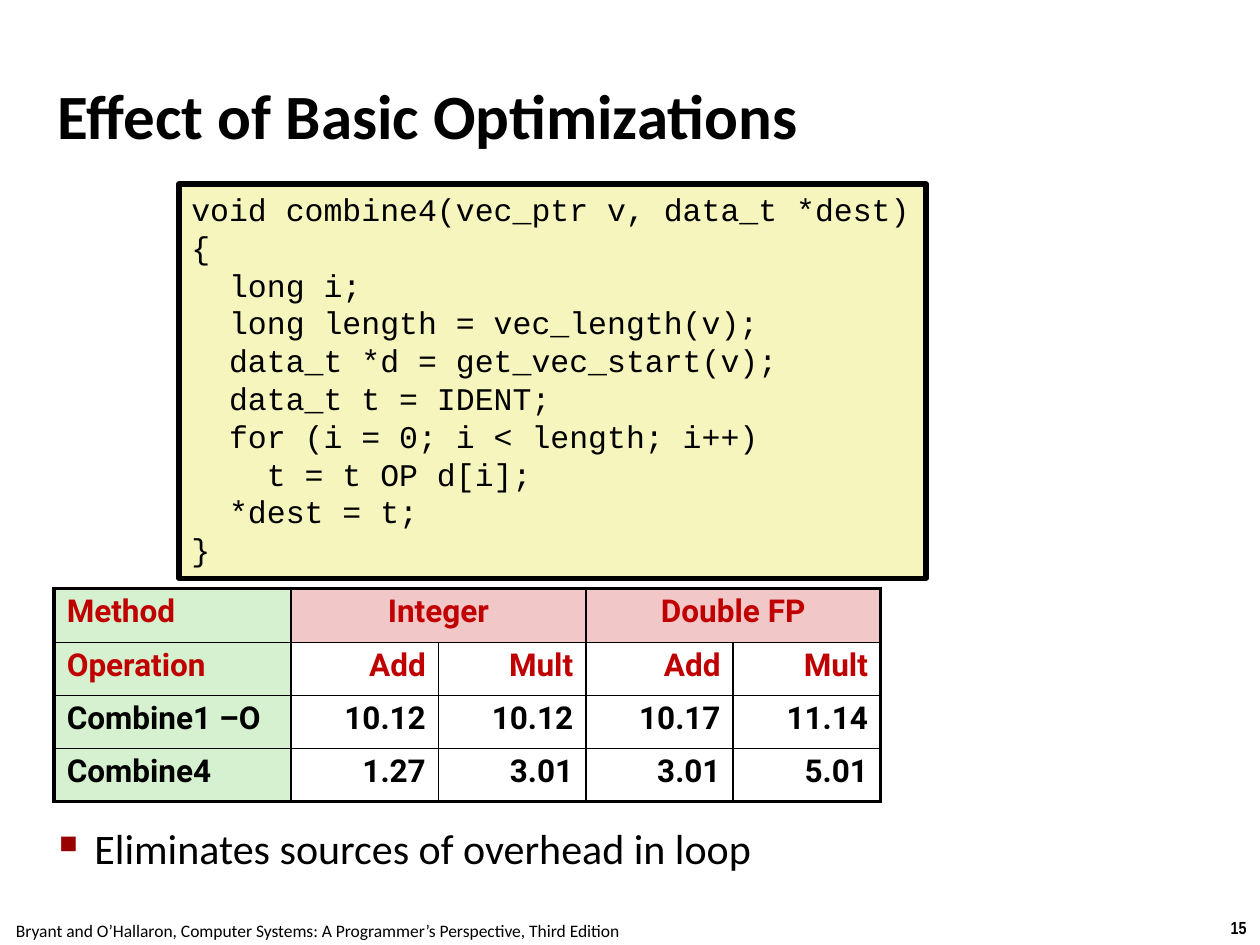
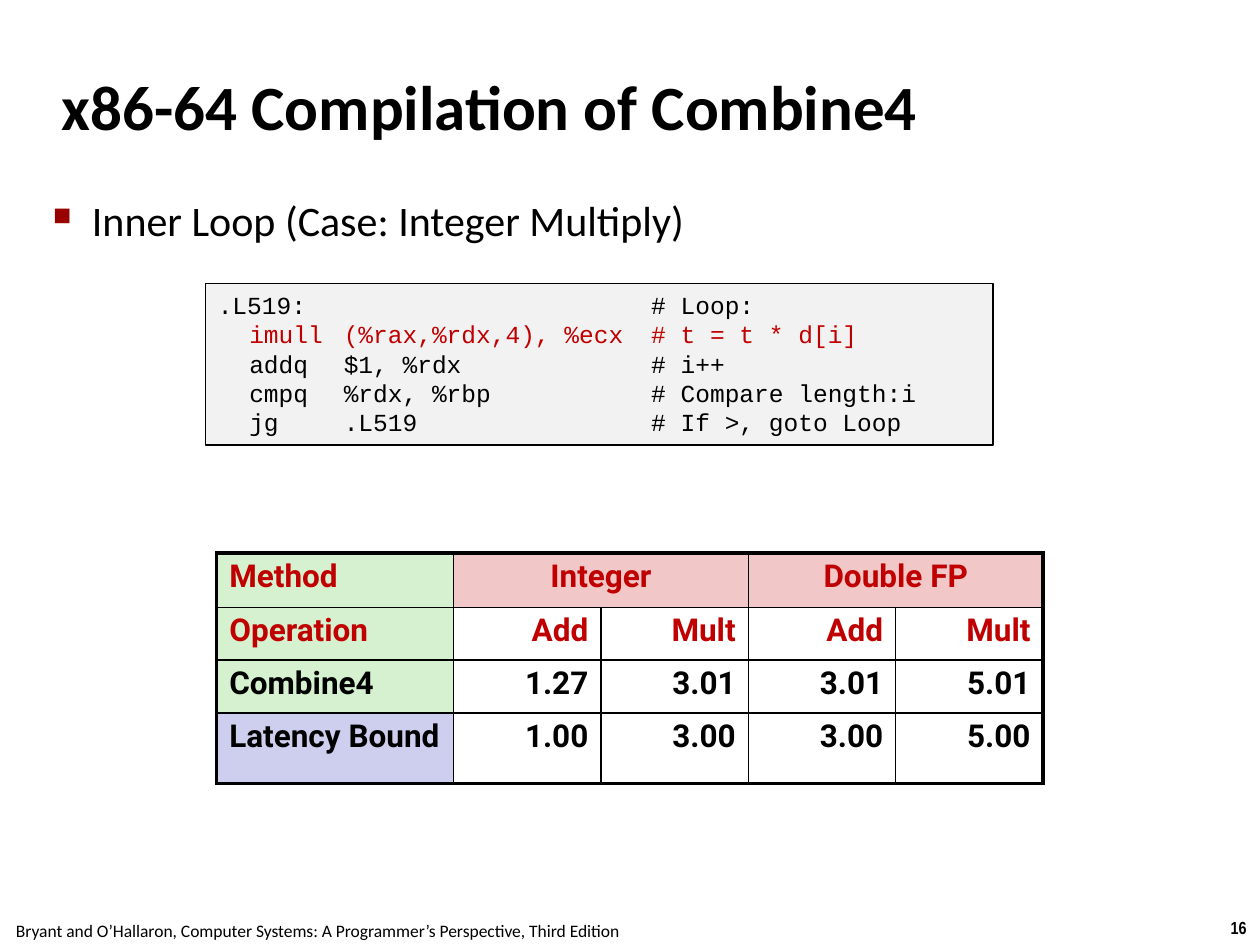
from pptx import Presentation
from pptx.util import Inches, Pt
from pptx.dml.color import RGBColor
from pptx.enum.shapes import MSO_SHAPE as Shape
from pptx.enum.text import PP_ALIGN as Align, MSO_ANCHOR as Anchor
from pptx.oxml.ns import qn
from lxml.etree import SubElement, Element

BLACK = RGBColor(0x00, 0x00, 0x00)
RED = RGBColor(0xC0, 0x00, 0x00)
GREEN = RGBColor(0xD5, 0xF1, 0xCF)
PINK = RGBColor(0xF1, 0xC7, 0xC7)
BLUE = RGBColor(0xCE, 0xCE, 0xEF)
CREAM = RGBColor(0xF6, 0xF5, 0xBD)
GREY = RGBColor(0xF2, 0xF2, 0xF2)
MAROON = RGBColor(0x99, 0x00, 0x00)

FOOTER = "Bryant and O’Hallaron, Computer Systems: A Programmer’s Perspective, Third Edition"
HEADS = ["Method", "Integer", "", "Double FP", ""]
OPS = ["Operation", "Add", "Mult", "Add", "Mult"]
COMBINE4 = ["Combine4", "1.27", "3.01", "3.01", "5.01"]

SOURCE = """void combine4(vec_ptr v, data_t *dest)
{
  long i;
  long length = vec_length(v);
  data_t *d = get_vec_start(v);
  data_t t = IDENT;
  for (i = 0; i < length; i++)
    t = t OP d[i];
  *dest = t;
}"""

LOOP = """.L519:\t\t# Loop:
\timull\t(%rax,%rdx,4), %ecx\t# t = t * d[i]
\taddq\t$1, %rdx\t# i++
\tcmpq\t%rdx, %rbp\t# Compare length:i
\tjg\t.L519\t# If >, goto Loop"""


def write(frame, text, font="Calibri", size=18, color=BLACK, bold=False,
          align=Align.LEFT, anchor=Anchor.TOP, inset=(0.1, 0.05), wrap=True,
          space=None, before=None, tabs=(), marked=None):
    frame.word_wrap = wrap
    frame.vertical_anchor = anchor
    frame.margin_left = frame.margin_right = Inches(inset[0])
    frame.margin_top = frame.margin_bottom = Inches(inset[1])
    for num, line in enumerate(text.split("\n")):
        para = frame.add_paragraph() if num else frame.paragraphs[0]
        para.alignment = align
        if space:
            para.line_spacing = space
        if before:
            para.space_before = Pt(before)
        if tabs:
            stops = SubElement(para._p.get_or_add_pPr(), qn("a:tabLst"))
            for stop in tabs:
                SubElement(stops, qn("a:tab"), pos=str(Inches(stop)), algn="l")
        run = para.add_run()
        run.text = line
        run.font.name = font
        run.font.size = Pt(size)
        run.font.bold = bold
        run.font.color.rgb = RED if num == marked else color


def border(cell, widths):
    props = cell._tc.get_or_add_tcPr()
    for num, (side, width) in enumerate(zip("LRTB", widths)):
        line = Element(qn(f"a:ln{side}"), w=str(Pt(width)))
        fill = SubElement(line, qn("a:solidFill"))
        SubElement(fill, qn("a:srgbClr"), val=str(BLACK))
        props.insert(num, line)


class Deck:
    thin, thick = 1, 2.25
    snug = (0.04, 0.04)

    def __init__(self):
        self.show = Presentation()
        self.show.slide_width = Inches(10)
        self.show.slide_height = Inches(7.5)

    def slide(self, number):
        self.page = self.show.slides.add_slide(self.show.slide_layouts[6])
        self.text((9.66, 7.23, 0.34, 0.27), str(number), font="Arial Narrow",
                  size=10, bold=True, align=Align.CENTER, wrap=False)
        self.text((-0.02, 7.25, 5.08, 0.27), FOOTER, size=10,
                  align=Align.CENTER, wrap=False)

    def text(self, area, text, **form):
        box = self.page.shapes.add_textbox(*map(Inches, area))
        write(box.text_frame, text, **form)
        return box

    def title(self, area, text):
        self.text(area, text, size=36, bold=True, anchor=Anchor.MIDDLE,
                  inset=self.snug)

    def bullet(self, area, text, indent):
        box = self.text(area, text, size=24, inset=self.snug, before=6)
        props = box.text_frame.paragraphs[0]._p.get_or_add_pPr()
        props.set("marL", str(Inches(indent)))
        props.set("indent", str(-Inches(indent)))
        color = SubElement(props, qn("a:buClr"))
        SubElement(color, qn("a:srgbClr"), val=str(MAROON))
        SubElement(props, qn("a:buSzPct"), val="60000")
        SubElement(props, qn("a:buChar"), char="■")

    def code(self, area, text, fill, weight, **form):
        box = self.page.shapes.add_shape(Shape.RECTANGLE, *map(Inches, area))
        box.shadow.inherit = False
        box.fill.solid()
        box.fill.fore_color.rgb = fill
        box.line.color.rgb = BLACK
        box.line.width = Pt(weight)
        write(box.text_frame, text, font="Courier New", **form)

    def table(self, left, top, body, tints, heights):
        rows = [HEADS, OPS] + body
        widths = [1.88] + [1.17] * 4
        area = left, top, sum(widths), sum(heights)
        grid = self.page.shapes.add_table(
            len(rows), len(widths), *map(Inches, area)).table
        grid.first_row = grid.horz_banding = False
        for col, width in zip(grid.columns, widths):
            col.width = Inches(width)
        for row, height in zip(grid.rows, heights):
            row.height = Inches(height)
        for start in (1, 3):
            grid.cell(0, start).merge(grid.cell(0, start + 1))
        for r, row in enumerate(rows):
            for c, value in enumerate(row):
                cell = grid.cell(r, c)
                tint = tints[r] if c == 0 else PINK if r == 0 else None
                if tint:
                    cell.fill.solid()
                    cell.fill.fore_color.rgb = tint
                else:
                    cell.fill.background()
                edges = (c == 0, c == len(row) - 1 or (r == 0 and c == 3),
                         r == 0, r == len(rows) - 1)
                border(cell, [self.thick if e else self.thin for e in edges])
                if value:
                    align = (Align.LEFT if c == 0 else
                             Align.CENTER if r == 0 else Align.RIGHT)
                    write(cell.text_frame, value, font="Roboto", bold=True,
                          color=RED if r < 2 else BLACK, align=align,
                          space=0.95, inset=(0.05, 0.05))


def main():
    deck = Deck()

    deck.slide(15)
    deck.title((0.42, 0.28, 9.17, 1.25), "Effect of Basic Optimizations")
    deck.bullet((0.43, 6.49, 8.64, 0.59),
                "Eliminates sources of overhead in loop", 0.28)
    deck.code((1.42, 1.46, 5.93, 3.13), SOURCE, CREAM, 3)
    first = ["Combine1 –O", "10.12", "10.12", "10.17", "11.14"]
    deck.table(0.43, 4.67, [first, COMBINE4], [GREEN] * 4,
               [0.43, 0.42, 0.42, 0.42])

    deck.slide(16)
    deck.title((0.45, 0.42, 8.3, 0.83), "x86-64 Compilation of Combine4")
    deck.bullet((0.38, 1.5, 9.03, 0.75),
                "Inner Loop (Case: Integer Multiply)", 0.31)
    deck.code((1.63, 2.25, 6.25, 1.28), LOOP, GREY, 1, size=14,
              tabs=(0.25, 1, 3.44), marked=1)
    bound = ["Latency Bound", "1.00", "3.00", "3.00", "5.00"]
    deck.table(1.72, 4.39, [COMBINE4, bound], [GREEN] * 3 + [BLUE],
               [0.43, 0.42, 0.42, 0.56])

    deck.show.save("out.pptx")


if __name__ == "__main__":
    main()
